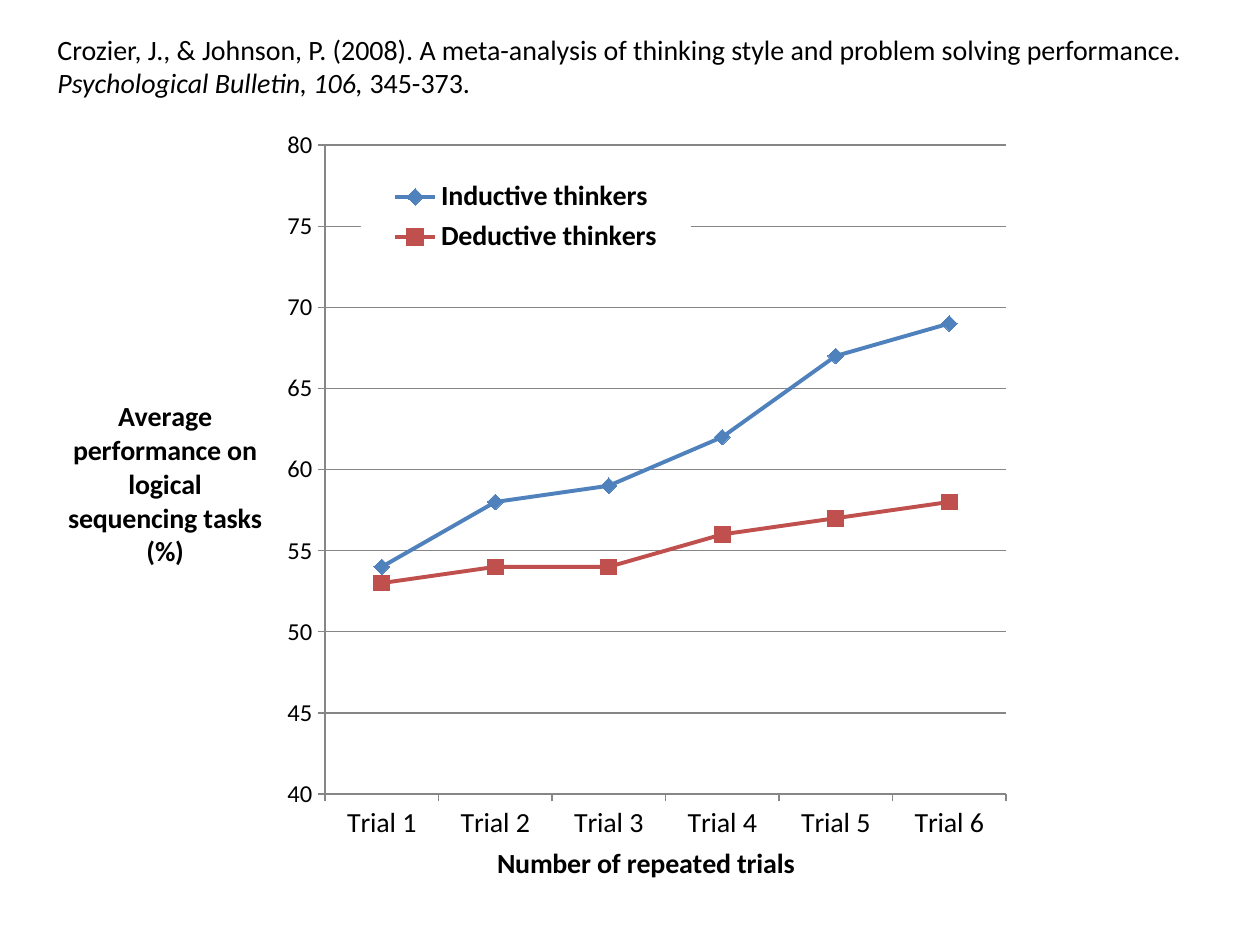
from dataclasses import dataclass

from lxml.etree import SubElement as Sub
from pptx import Presentation
from pptx.chart.data import CategoryChartData as Data
from pptx.dml.color import RGBColor as RGB
from pptx.enum.chart import (
    XL_CHART_TYPE as Kind, XL_LEGEND_POSITION as Side,
    XL_MARKER_STYLE as Mark, XL_TICK_MARK as Tick)
from pptx.enum.text import MSO_AUTO_SIZE as Fit
from pptx.oxml import parse_xml
from pptx.oxml.ns import nsdecls, qn
from pptx.util import Emu, Pt

SCALE = 914400 / 126
CHART = (54, 66, 1062, 824)


def px(n):
    return Emu(round(n * SCALE))


def put(obj, vals):
    for key, val in vals.items():
        setattr(obj, key, val)


@dataclass(frozen=True)
class Theme:
    face: str = "Calibri"
    ink: RGB = RGB(0, 0, 0)
    grid: RGB = RGB(0x86, 0x86, 0x86)
    blue: RGB = RGB(0x4F, 0x81, 0xBD)
    red: RGB = RGB(0xC0, 0x50, 0x4D)
    body: Pt = Pt(16)
    small: Pt = Pt(14)
    thin: Pt = Pt(0.75)
    thick: Pt = Pt(2.25)
    mark: int = 9


class Page:
    def __init__(self, slide, theme):
        self.slide, self.theme = slide, theme

    def font(self, font, **vals):
        look = self.theme
        put(font, {"name": look.face, "size": look.body, **vals})
        font.color.rgb = look.ink

    def line(self, form, color, width):
        form.line.color.rgb = color
        form.line.width = width

    def place(self, node, spot, box, inner=False):
        """Lay out a chart part; box is in px from the chart's corner."""
        for old in node.findall(qn("c:layout")):
            node.remove(old)
        lay = parse_xml(f"<c:layout {nsdecls('c')}/>")
        man = Sub(lay, qn("c:manualLayout"))
        vals = {"layoutTarget": "inner"} if inner else {}
        vals |= {"xMode": "edge", "yMode": "edge"}
        wide, high = CHART[2:]
        for key, val, full in zip("xywh", box, (wide, high) * 2):
            vals[key] = val / full
        for key, val in vals.items():
            Sub(man, qn(f"c:{key}")).set("val", str(val))
        node.insert(spot, lay)

    def text(self, box, runs):
        frame = self.slide.shapes.add_textbox(*map(px, box)).text_frame
        put(frame, {"word_wrap": True, "auto_size": Fit.SHAPE_TO_FIT_TEXT})
        for words, slant in runs:
            run = frame.paragraphs[0].add_run()
            run.text = words
            self.font(run.font, italic=slant)

    def chart(self, box, cats, rows):
        data = Data()
        data.categories = cats
        for name, vals, *_ in rows:
            data.add_series(name, vals)
        chart = self.slide.shapes.add_chart(
            Kind.LINE_MARKERS, *map(px, box), data).chart
        chart.has_title = False
        self.font(chart.font)
        chart.plots[0].vary_by_categories = False
        for row, (*_, color, shape) in zip(chart.series, rows):
            row.smooth = False
            self.line(row.format, color, self.theme.thick)
            put(row.marker, {"style": shape, "size": self.theme.mark})
            fill = row.marker.format.fill
            fill.solid()
            fill.fore_color.rgb = color
            self.line(row.marker.format, color, self.theme.thin)
        return chart

    def axis(self, axis, title, size, spot, **vals):
        put(axis, {"major_tick_mark": Tick.OUTSIDE,
                   "minor_tick_mark": Tick.NONE, **vals})
        self.font(axis.tick_labels.font, size=size)
        self.line(axis.format, self.theme.grid, self.theme.thin)
        if axis.has_major_gridlines:
            self.line(axis.major_gridlines.format,
                      self.theme.grid, self.theme.thin)
        frame = axis.axis_title.text_frame
        frame.text = title
        self.font(frame.paragraphs[0].runs[0].font, bold=True)
        turn = frame._txBody.find(qn("a:bodyPr"))
        turn.set("rot", "0")
        turn.set("vert", "horz")
        self.place(axis.axis_title._element, 1, spot)

    def legend(self, chart, box):
        chart.has_legend = True
        key = chart.legend
        put(key, {"position": Side.RIGHT, "include_in_layout": True})
        self.font(key.font, bold=True)
        self.place(key._element, 1, box)
        # White backing hides the gridline behind the key
        key._element.find(qn("c:txPr")).addprevious(parse_xml(
            f"<c:spPr {nsdecls('c', 'a')}><a:solidFill>"
            '<a:srgbClr val="FFFFFF"/></a:solidFill></c:spPr>'))


def main():
    deck = Presentation()
    put(deck, {"slide_width": px(1260), "slide_height": px(945)})
    look = Theme()
    page = Page(deck.slides.add_slide(deck.slide_layouts[6]), look)

    # Line chart of both thinking styles
    chart = page.chart(CHART, [f"Trial {n}" for n in range(1, 7)], [
        ("Inductive thinkers", (54, 58, 59, 62, 67, 69), look.blue, Mark.DIAMOND),
        ("Deductive thinkers", (53, 54, 54, 56, 57, 58), look.red, Mark.SQUARE)])
    page.place(chart._chartSpace.chart.plotArea, 0, (271, 80, 681, 656), inner=True)

    # Axes and key
    page.axis(chart.category_axis, "Number of repeated trials",
              look.body, (438, 782), has_major_gridlines=False)
    page.axis(chart.value_axis,
              "Average performance on logical sequencing tasks (%)",
              look.small, (9, 330), has_major_gridlines=True,
              minimum_scale=40, maximum_scale=80, major_unit=5)
    page.legend(chart, (307, 109, 330, 87))

    # Citation
    page.text((45, 26, 1201, 81), [
        ("Crozier, J., & Johnson, P. (2008). A meta-analysis of thinking "
         "style and problem solving performance. ", False),
        ("Psychological Bulletin, 106, ", True),
        ("345-373.", False)])

    deck.save("out.pptx")


if __name__ == "__main__":
    main()
